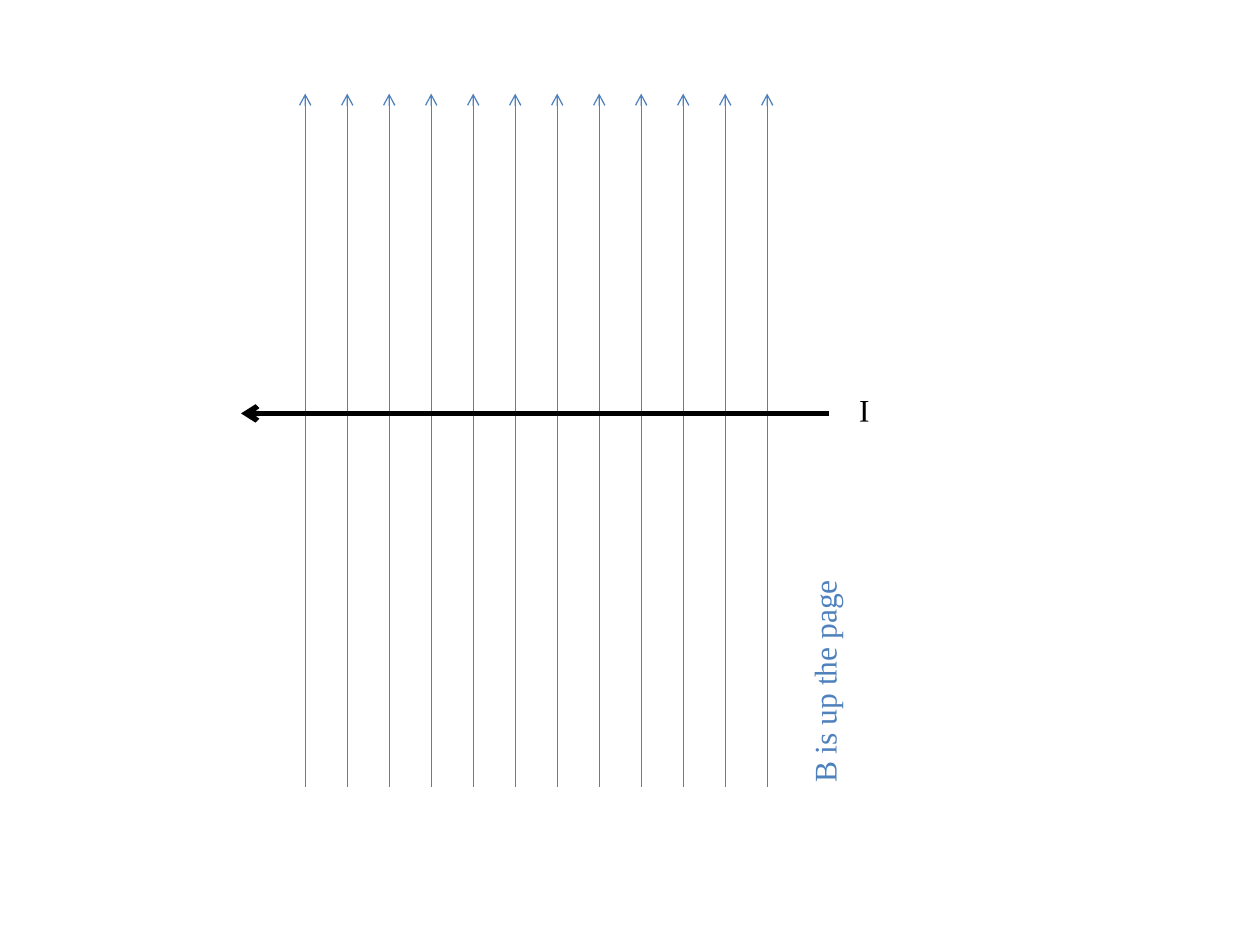
from lxml.etree import SubElement
from pptx import Presentation
from pptx.dml.color import RGBColor
from pptx.enum.shapes import MSO_CONNECTOR
from pptx.enum.text import MSO_AUTO_SIZE
from pptx.oxml.ns import qn
from pptx.util import Pt

BLUE = RGBColor(0x4F, 0x81, 0xBD)
BLACK = RGBColor(0x00, 0x00, 0x00)


class Diagram:
    font = "Times New Roman"
    size = 18

    def __init__(self, prs):
        self.slide = prs.slides.add_slide(prs.slide_layouts[6])

    def group(self):
        return self.slide.shapes.add_group_shape().shapes

    def arrow(self, shapes, x1, y1, x2, y2, color, width):
        c = shapes.add_connector(MSO_CONNECTOR.STRAIGHT,
                                 Pt(x1), Pt(y1), Pt(x2), Pt(y2))
        c.line.color.rgb = color
        c.line.width = Pt(width)
        SubElement(c.line._get_or_add_ln(), qn("a:tailEnd"), type="arrow")
        SubElement(c._element.spPr, qn("a:effectLst"))

    def label(self, shapes, text, x, y, w, h, color, rotation):
        sp = shapes.add_textbox(Pt(x), Pt(y), Pt(w), Pt(h))
        sp.rotation = rotation
        tf = sp.text_frame
        tf.word_wrap = False
        tf.auto_size = MSO_AUTO_SIZE.SHAPE_TO_FIT_TEXT
        p = tf.paragraphs[0]
        p.text = text
        p.font.name = self.font
        p.font.size = Pt(self.size)
        p.font.color.rgb = color


def main():
    prs = Presentation()
    prs.slide_width, prs.slide_height = Pt(720), Pt(540)
    d = Diagram(prs)

    # Magnetic field: evenly spaced lines pointing up
    field = d.group()
    for i in range(12):
        x = 174.4 + 24 * i
        d.arrow(field, x, 449.5, x, 53.5, BLUE, 0.75)
    d.label(field, "B is up the page", 402.5, 371.5, 137, 29, BLUE, 270)

    # Current: heavy arrow pointing left
    current = d.group()
    d.arrow(current, 473.75, 236.25, 137.75, 236.25, BLACK, 3)
    d.label(current, "I", 483, 221.75, 21, 29, BLACK, 180)

    prs.save("out.pptx")


if __name__ == "__main__":
    main()
